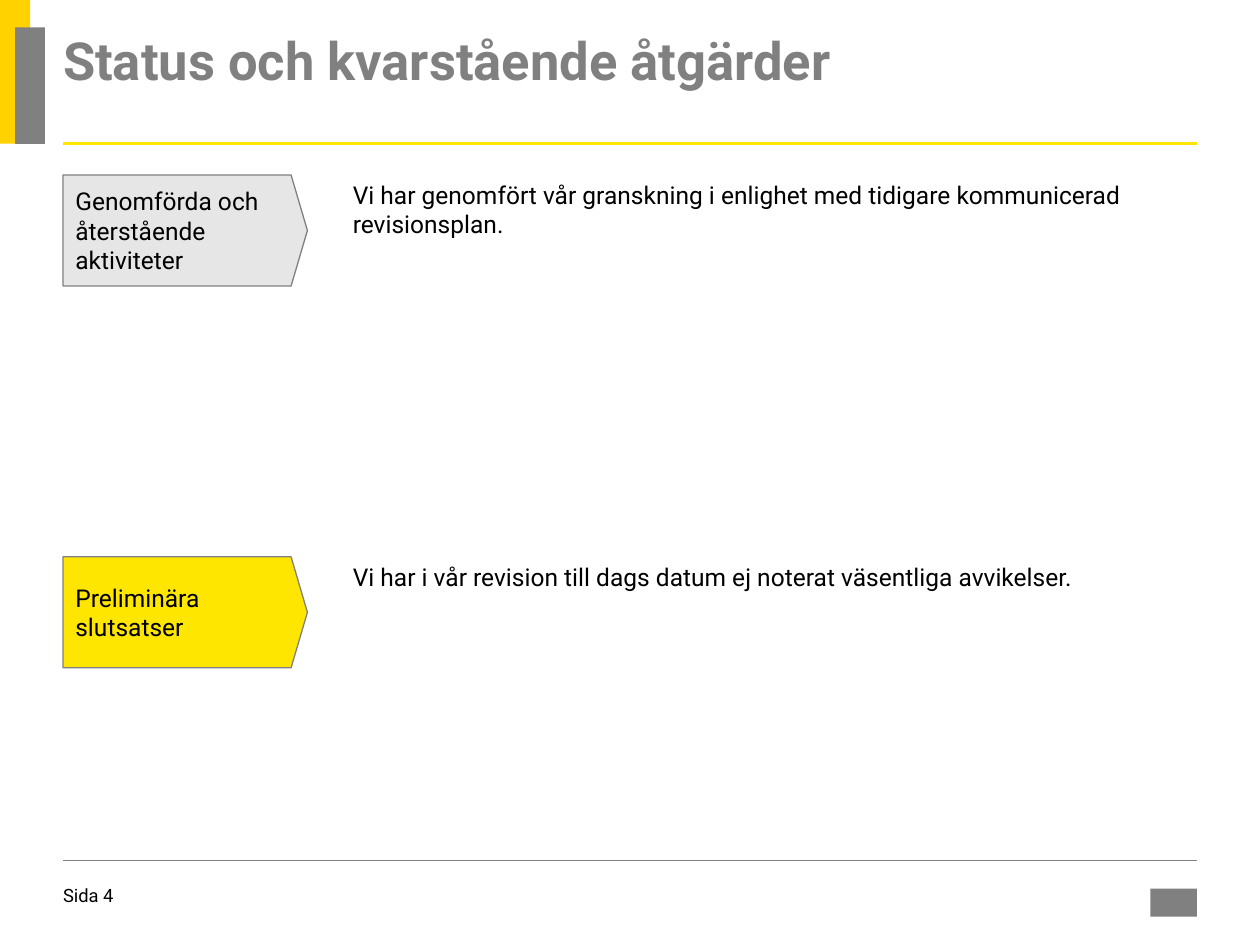
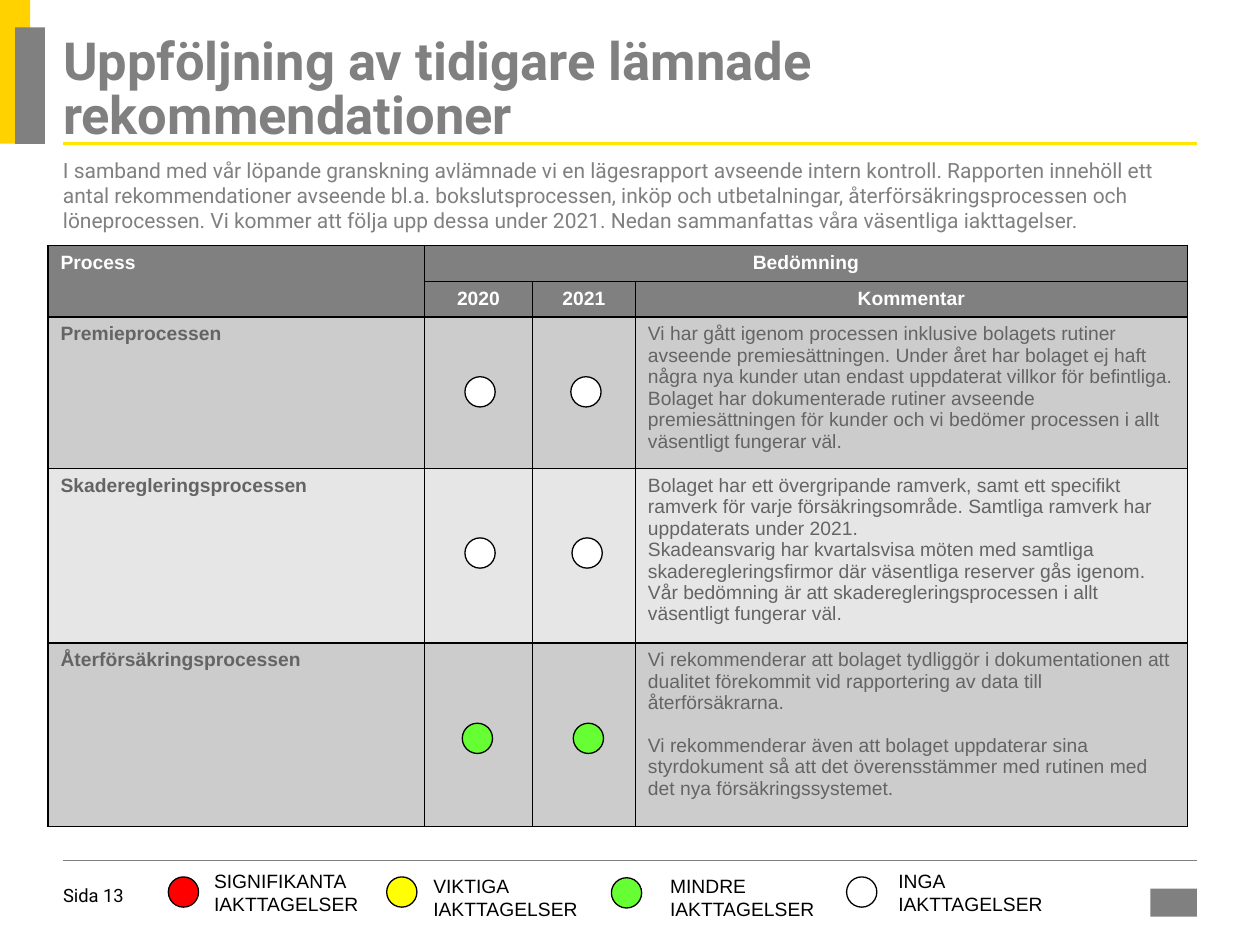
from lxml import etree
from pptx import Presentation
from pptx.dml.color import RGBColor
from pptx.enum.shapes import MSO_CONNECTOR, MSO_SHAPE
from pptx.enum.text import MSO_ANCHOR, PP_ALIGN
from pptx.oxml.ns import qn
from pptx.util import Pt

RECT, ARROW_BOX, DOT = MSO_SHAPE.RECTANGLE, MSO_SHAPE.PENTAGON, MSO_SHAPE.FLOWCHART_CONNECTOR
STRAIGHT = MSO_CONNECTOR.STRAIGHT
TOP, MIDDLE = MSO_ANCHOR.TOP, MSO_ANCHOR.MIDDLE
LEFT, CENTER = PP_ALIGN.LEFT, PP_ALIGN.CENTER

# Shared style
GREY, GOLD, YELLOW, BLACK, WHITE = "808080", "FFD200", "FFE600", "000000", "FFFFFF"
PALE, MID, TABLE_TEXT = "E6E6E6", "CCCCCC", "646464"
RED, AMBER, GREEN = "FF0000", "FFFF00", "66FF33"
MARGIN, WIDTH = 36, 648
TITLE_FONT = dict(name="Roboto", size=Pt(30), bold=True)
BODY_FONT = dict(name="Roboto", size=Pt(14))
INTRO_FONT = dict(name="Roboto", size=Pt(12))
PAGE_FONT = dict(name="Roboto", size=Pt(10.5))
TABLE_FONT = dict(name="Arial", size=Pt(11), bold=False)
TABLE_BOLD = dict(TABLE_FONT, bold=True)
LEGEND_FONT = dict(name="Arial", size=Pt(11))

# Status slide: label, fill, top, text, text height
STATUS_TITLE = "Status och kvarstående åtgärder"
STATUS = [
    ("Genomförda och återstående aktiviteter", PALE, 100,
     "Vi har genomfört vår granskning i enlighet med tidigare kommunicerad revisionsplan.", 163.4),
    ("Preliminära slutsatser", YELLOW, 318.2,
     "Vi har i vår revision till dags datum ej noterat väsentliga avvikelser.", 23),
]

# Follow-up slide
FOLLOW_TITLE = "Uppföljning av tidigare lämnade rekommendationer"
INTRO = ("I samband med vår löpande granskning avlämnade vi en lägesrapport avseende intern kontroll. "
         "Rapporten innehöll ett antal rekommendationer avseende bl.a. bokslutsprocessen, inköp och "
         "utbetalningar, återförsäkringsprocessen och löneprocessen. Vi kommer att följa upp dessa under "
         "2021. Nedan sammanfattas våra väsentliga iakttagelser.")
HEADERS = [["Process", "Bedömning", "", ""], ["", "2020", "2021", "Kommentar"]]
# name, comment paragraphs, gap between them, row fill, rating colour, dot lefts, dot top
PROCESSES = [
    ("Premieprocessen",
     ["Vi har gått igenom processen inklusive bolagets rutiner avseende premiesättningen. Under året "
      "har bolaget ej haft några nya kunder utan endast uppdaterat villkor för befintliga. Bolaget har "
      "dokumenterade rutiner avseende premiesättningen för kunder och vi bedömer processen i allt "
      "väsentligt fungerar väl."],
     0, MID, WHITE, (265.7, 326.2), 215.3),
    ("Skaderegleringsprocessen",
     ["Bolaget har ett övergripande ramverk, samt ett specifikt ramverk för varje försäkringsområde. "
      "Samtliga ramverk har uppdaterats under 2021.",
      "Skadeansvarig har kvartalsvisa möten med samtliga skaderegleringsfirmor där väsentliga reserver "
      "gås igenom. Vår bedömning är att skaderegleringsprocessen i allt väsentligt fungerar väl."],
     0, PALE, WHITE, (265.7, 326.9), 307.4),
    ("Återförsäkringsprocessen",
     ["Vi rekommenderar att bolaget tydliggör i dokumentationen att dualitet förekommit vid "
      "rapportering av data till återförsäkrarna.",
      "Vi rekommenderar även att bolaget uppdaterar sina styrdokument så att det överensstämmer med "
      "rutinen med det nya försäkringssystemet."],
     12.2, MID, GREEN, (264.2, 327.6), 413.3),
]
TABLE_LEFT, TABLE_TOP = 27.4, 140.4
COLUMNS = [215.2, 61.7, 58.8, 315.4]
ROWS = [19.4, 19.4, 80.7, 93, 104.8]
DOT_SIZE = 17.3
# first word, colour, dot left, dot top, text left, text top
LEGEND = [
    ("SIGNIFIKANTA", RED, 96.2, 501.1, 115.2, 493.2),
    ("VIKTIGA", AMBER, 221, 501.1, 240.5, 496.1),
    ("MINDRE", GREEN, 349.4, 501.6, 375.8, 496.1),
    ("INGA", WHITE, 483.8, 501.1, 506.2, 493.2),
]


def rgb(value):
    return RGBColor.from_string(value)


def put_text(tf, paragraphs, font, color, align=LEFT, gap=0, spacing=None):
    for i, text in enumerate(paragraphs):
        p = tf.paragraphs[0] if i == 0 else tf.add_paragraph()
        p.alignment, p.line_spacing = align, spacing
        p.space_before = Pt(gap if i else 0)
        r = p.add_run()
        r.text = text
        for key, value in font.items():
            setattr(r.font, key, value)
        r.font.color.rgb = rgb(color)


def set_frame(tf, inset_x=0, inset_y=0, anchor=TOP):
    values = dict(margin_left=Pt(inset_x), margin_right=Pt(inset_x), margin_top=Pt(inset_y),
                  margin_bottom=Pt(inset_y), word_wrap=True, vertical_anchor=anchor)
    for key, value in values.items():
        setattr(tf, key, value)


def add_text(s, box, paragraphs, font, color=BLACK, insets=(0, 0)):
    tf = s.shapes.add_textbox(*map(Pt, box)).text_frame
    set_frame(tf, *insets)
    put_text(tf, paragraphs, font, color)


def add_box(s, kind, box, fill, line=None):
    sp = s.shapes.add_shape(kind, *map(Pt, box))
    sp.shadow.inherit = False
    sp.fill.solid()
    sp.fill.fore_color.rgb = rgb(fill)
    if line:
        sp.line.color.rgb = rgb(line)
        sp.line.width = Pt(0.75)
    else:
        sp.line.fill.background()
    return sp


def add_dot(s, left, top, color):
    add_box(s, DOT, (left, top, DOT_SIZE, DOT_SIZE), color, BLACK)


def add_rule(s, y, color, weight):
    line = s.shapes.add_connector(STRAIGHT, Pt(MARGIN), Pt(y), Pt(MARGIN + WIDTH), Pt(y))
    line.line.color.rgb = rgb(color)
    line.line.width = Pt(weight)
    etree.SubElement(line._element.spPr, qn("a:effectLst"))


def add_slide(prs, title, page):
    s = prs.slides.add_slide(prs.slide_layouts[5])
    # Corner bands, rules and footer
    add_box(s, RECT, (0, 0, 17.3, 82.1), GOLD)
    add_box(s, RECT, (8.6, 15.6, 17.1, 66.7), GREY)
    add_rule(s, 82.2, YELLOW, 1.5)
    add_rule(s, 491.6, GREY, 0.25)
    add_text(s, (MARGIN, 505.4, 57, 16), [f"Sida {page}"], PAGE_FONT)
    add_box(s, RECT, (657.4, 507.8, 26.6, 16.1), GREY)
    # Title
    sp = s.shapes.title
    sp.left, sp.top, sp.width, sp.height = map(Pt, (MARGIN, 21.6, WIDTH, 67.7))
    set_frame(sp.text_frame)
    put_text(sp.text_frame, [title], TITLE_FONT, GREY, spacing=0.85)
    return s


def set_borders(cell):
    tc_pr = cell._tc.get_or_add_tcPr()
    for side in ("lnL", "lnR", "lnT", "lnB"):
        ln = etree.SubElement(tc_pr, qn(f"a:{side}"), w=str(Pt(1)))
        fill = etree.SubElement(ln, qn("a:solidFill"))
        etree.SubElement(fill, qn("a:srgbClr"), val=BLACK)


def fill_cell(cell, paragraphs, font, color, fill, align=LEFT, gap=0):
    set_borders(cell)
    cell.fill.solid()
    cell.fill.fore_color.rgb = rgb(fill)
    if any(paragraphs):
        put_text(cell.text_frame, paragraphs, font, color, align, gap)


def add_process_table(s):
    frame = s.shapes.add_table(len(ROWS), len(COLUMNS), Pt(TABLE_LEFT), Pt(TABLE_TOP),
                               Pt(sum(COLUMNS)), Pt(sum(ROWS)))
    table = frame.table
    table.first_row = table.horz_banding = False
    for column, width in zip(table.columns, COLUMNS):
        column.width = Pt(width)
    for row, height in zip(table.rows, ROWS):
        row.height = Pt(height)
    # Header rows
    for i, labels in enumerate(HEADERS):
        for j, label in enumerate(labels):
            fill_cell(table.cell(i, j), [label], TABLE_BOLD, WHITE, GREY, CENTER if j else LEFT)
    table.cell(0, 0).merge(table.cell(1, 0))
    table.cell(0, 1).merge(table.cell(0, 3))
    # Process rows
    for i, (name, comment, gap, fill, *_) in enumerate(PROCESSES, len(HEADERS)):
        fill_cell(table.cell(i, 0), [name], TABLE_BOLD, TABLE_TEXT, fill)
        for j in (1, 2):
            fill_cell(table.cell(i, j), [], TABLE_FONT, TABLE_TEXT, fill)
        fill_cell(table.cell(i, 3), comment, TABLE_FONT, TABLE_TEXT, fill, gap=gap)


def build_status(prs):
    s = add_slide(prs, STATUS_TITLE, 4)
    for label, fill, top, text, height in STATUS:
        add_text(s, (198.7, top, 485.3, height), [text], BODY_FONT, insets=(2.9, 2.9))
        sp = add_box(s, ARROW_BOX, (MARGIN, top, 139.7, 63.4), fill, GREY)
        sp.adjustments[0] = 0.147
        set_frame(sp.text_frame, 7.2, 3.6, MIDDLE)
        put_text(sp.text_frame, [label], BODY_FONT, BLACK)


def build_follow_up(prs):
    s = add_slide(prs, FOLLOW_TITLE, 13)
    add_text(s, (MARGIN, 86.4, WIDTH, 52), [INTRO], INTRO_FONT, GREY, (0, 3.6))
    add_process_table(s)
    # Rating dots
    for *_, rating, lefts, top in PROCESSES:
        for left in lefts:
            add_dot(s, left, top, rating)
    # Legend
    for word, color, dot_left, dot_top, left, top in LEGEND:
        add_dot(s, dot_left, dot_top, color)
        add_text(s, (left, top, 104, 33.8), [word, "IAKTTAGELSER"], LEGEND_FONT, insets=(7.2, 3.6))


def main():
    prs = Presentation()
    prs.slide_width, prs.slide_height = Pt(720), Pt(540)
    build_status(prs)
    build_follow_up(prs)
    prs.save("out.pptx")


if __name__ == "__main__":
    main()
